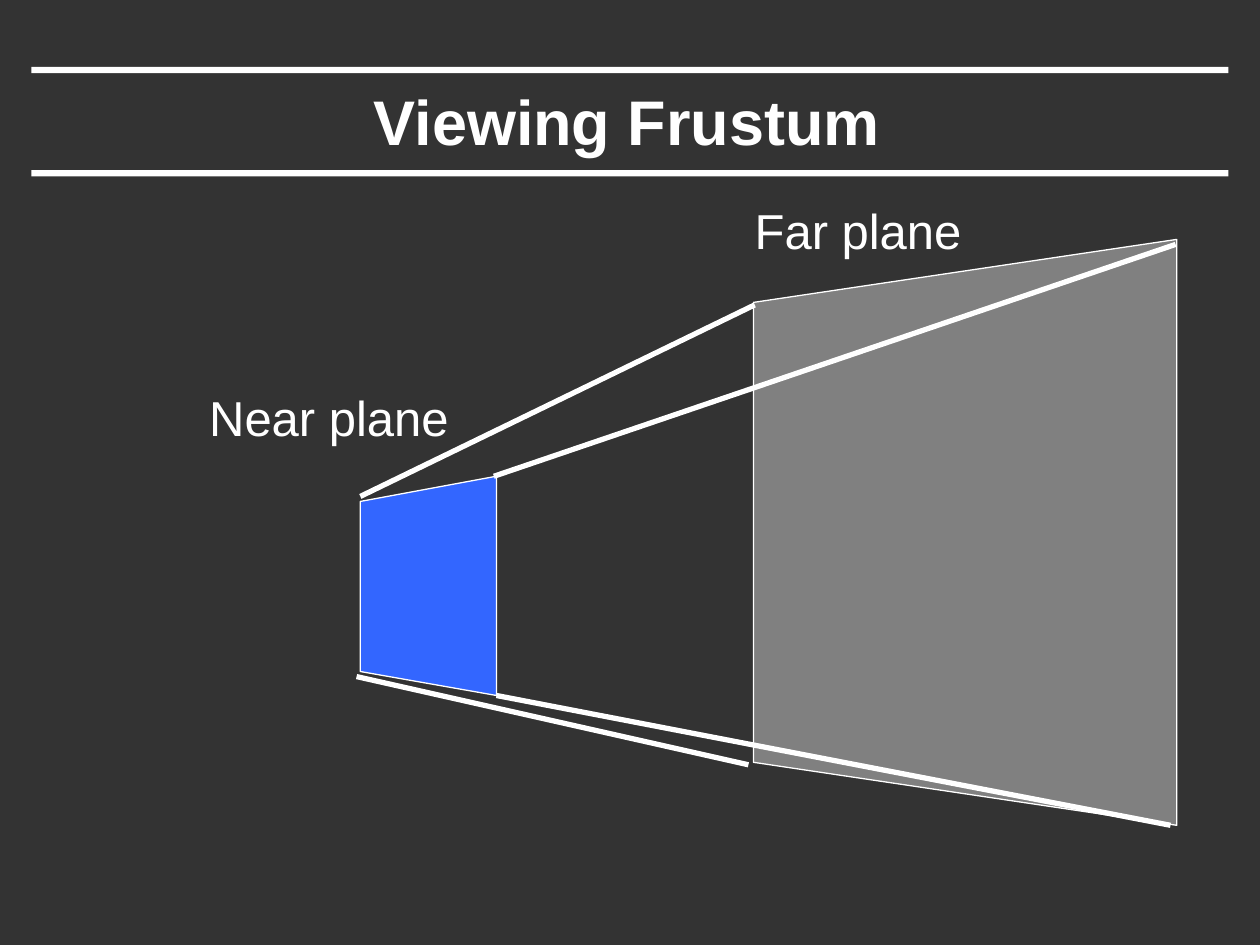
from dataclasses import dataclass

import pptx
import pptx.dml.color
import pptx.enum.shapes
import pptx.enum.text
import pptx.oxml.ns
import pptx.util
from pptx.presentation import Presentation
from pptx.slide import Slide

RGBColor = pptx.dml.color.RGBColor
BACKGROUND = RGBColor(0x33, 0x33, 0x33)
WHITE = RGBColor(0xFF, 0xFF, 0xFF)
GRAY = RGBColor(0x80, 0x80, 0x80)
BLUE = RGBColor(0x33, 0x66, 0xFF)
FONT = "Arial"
COLUMNS, ROWS = 100, 75
CELL = pptx.util.Inches(0.1)

Point = tuple[float, float]  # column, row


@dataclass(frozen=True)
class Box:
    column: float
    row: float
    width: float
    height: float

    def lengths(self) -> list[int]:
        return [grid(n) for n in (self.column, self.row, self.width, self.height)]


@dataclass(frozen=True)
class Plane:
    corners: tuple[Point, ...]
    color: RGBColor


@dataclass(frozen=True)
class Edge:
    near: Point
    far: Point


@dataclass(frozen=True)
class Label:
    text: str
    box: Box


TITLE_BOX = Box(7.4, 5.8, 84.7, 7.5)
RULES = [Box(2.5, row, COLUMNS - 5, 0.5) for row in (5.3, 13.5)]
PLANES = [
    Plane(((93.4, 19), (59.8, 24), (59.8, 60.5), (93.4, 65.5)), GRAY),
    Plane(((39.4, 37.8), (28.6, 39.8), (28.6, 53.3), (39.4, 55.2)), BLUE),
]
EDGES = [
    Edge((39.2, 37.8), (93.3, 19.4)),
    Edge((28.6, 39.4), (59.9, 24.2)),
    Edge((39.4, 55.2), (92.9, 65.5)),
    Edge((28.3, 53.7), (59.4, 60.7)),
]
LABELS = [
    Label("Near plane", Box(15.5, 30.3, 21.2, 5.7)),
    Label("Far plane", Box(58.8, 15.4, 18.6, 5.7)),
]


def grid(cells: float) -> int:
    return round(cells * CELL)


def format_text(shape, text: str, size: int, bold: bool = False) -> None:
    text_frame = shape.text_frame
    text_frame.text = text
    paragraph = text_frame.paragraphs[0]
    paragraph.alignment = pptx.enum.text.PP_ALIGN.CENTER
    font = paragraph.runs[0].font
    font.name, font.size, font.bold = FONT, pptx.util.Pt(size), bold
    font.color.rgb = WHITE


def add_title(slide: Slide, text: str) -> None:
    title = slide.shapes.title
    title.left, title.top, title.width, title.height = TITLE_BOX.lengths()
    title.text_frame.vertical_anchor = pptx.enum.text.MSO_ANCHOR.MIDDLE
    format_text(title, text, 36, bold=True)


def add_rule(slide: Slide, box: Box) -> None:
    rule = slide.shapes.add_shape(
        pptx.enum.shapes.MSO_SHAPE.RECTANGLE, *box.lengths()
    )
    rule.shadow.inherit = False
    rule.fill.solid()
    rule.fill.fore_color.rgb = WHITE
    rule.line.fill.background()


def add_plane(slide: Slide, plane: Plane) -> None:
    start, *others = [(grid(x), grid(y)) for x, y in plane.corners]
    builder = slide.shapes.build_freeform(*start)
    builder.add_line_segments(others, close=True)
    shape = builder.convert_to_shape()
    shape.shadow.inherit = False
    shape.fill.solid()
    shape.fill.fore_color.rgb = plane.color
    shape.line.color.rgb = WHITE
    shape.line.width = pptx.util.Pt(0.75)


def add_edge(slide: Slide, edge: Edge) -> None:
    connector = slide.shapes.add_connector(
        pptx.enum.shapes.MSO_CONNECTOR.STRAIGHT,
        *[grid(n) for n in edge.near + edge.far],
    )
    connector.line.color.rgb = WHITE
    connector.line.width = pptx.util.Pt(3)
    properties = connector._element.spPr
    properties.append(pptx.oxml.xmlchemy.OxmlElement("a:effectLst"))


def add_label(slide: Slide, label: Label) -> None:
    text_box = slide.shapes.add_textbox(*label.box.lengths())
    text_box.text_frame.word_wrap = False
    text_box.text_frame.auto_size = pptx.enum.text.MSO_AUTO_SIZE.SHAPE_TO_FIT_TEXT
    format_text(text_box, label.text, 28)


def build_slide(presentation: Presentation) -> None:
    title_only = presentation.slide_layouts[5]
    slide = presentation.slides.add_slide(title_only)
    slide.background.fill.solid()
    slide.background.fill.fore_color.rgb = BACKGROUND
    for rule in RULES:
        add_rule(slide, rule)
    add_title(slide, "Viewing Frustum")
    for plane in PLANES:
        add_plane(slide, plane)
    for edge in EDGES:
        add_edge(slide, edge)
    for label in LABELS:
        add_label(slide, label)


def main() -> None:
    presentation = pptx.Presentation()
    presentation.slide_width = grid(COLUMNS)
    presentation.slide_height = grid(ROWS)
    build_slide(presentation)
    presentation.save("out.pptx")


if __name__ == "__main__":
    main()
